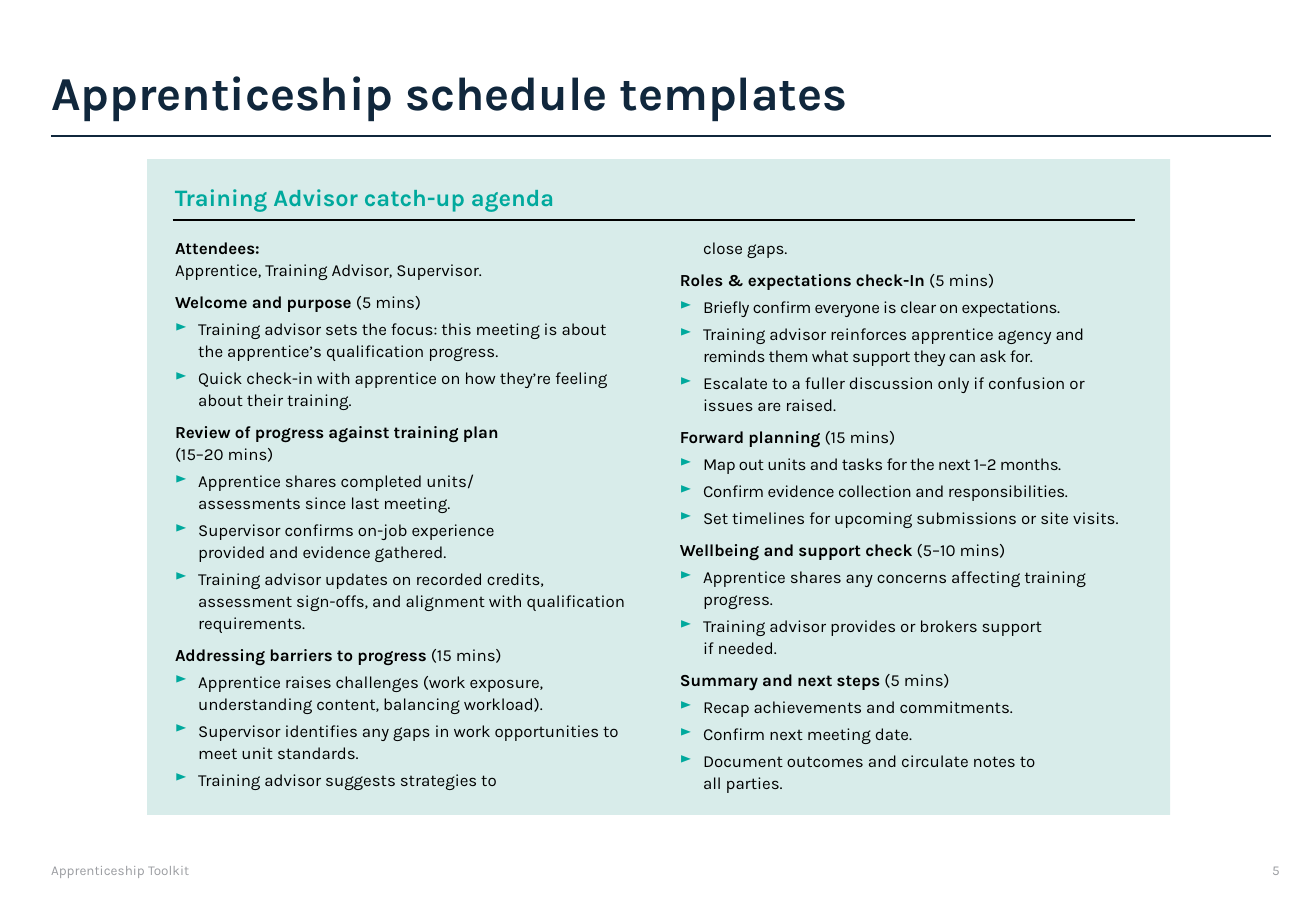
from dataclasses import dataclass

from lxml.etree import SubElement
from pptx import Presentation
from pptx.dml.color import RGBColor
from pptx.enum.shapes import MSO_CONNECTOR, MSO_SHAPE
from pptx.enum.text import MSO_ANCHOR, MSO_AUTO_SIZE, PP_ALIGN
from pptx.oxml.ns import qn
from pptx.util import Pt

EMU_PER_PX = 9144


@dataclass(frozen=True)
class Theme:
    font: str = "Karla"
    navy: str = "10273C"
    teal: str = "00A99D"
    mint: str = "D8ECEA"
    black: str = "000000"
    grey: str = "9B9DA1"
    title: int = 28
    heading: int = 14
    body: int = 10
    footer: int = 8
    leading: int = 13
    gap: int = 3
    section_gap: int = 6


@dataclass(frozen=True)
class Box:
    left: int
    top: int
    width: int
    height: int

    def inside(self, left, top, width, height):
        return Box(self.left + left, self.top + top, width, height)

    def emu(self):
        return [px(side) for side in (self.left, self.top, self.width, self.height)]


THEME = Theme()

AGENDA = [
    ("Welcome and purpose ", "(5 mins)", [
        "Training advisor sets the focus: this meeting is about the apprentice’s qualification progress.",
        "Quick check-in with apprentice on how they’re feeling about their training.",
    ]),
    ("Review of progress against training plan \n", "(15–20 mins)", [
        "Apprentice shares completed units/\nassessments since last meeting.",
        "Supervisor confirms on-job experience \nprovided and evidence gathered.",
        "Training advisor updates on recorded credits, assessment sign-offs, "
        "and alignment with qualification requirements.",
    ]),
    ("Addressing barriers to progress ", "(15 mins)", [
        "Apprentice raises challenges (work exposure, understanding content, balancing workload).",
        "Supervisor identifies any gaps in work opportunities to meet unit standards.",
        "Training advisor suggests strategies to \nclose gaps.",
    ]),
    ("Roles & expectations check-In ", "(5 mins)", [
        [("Briefly confirm everyone is clear on expectations.", -0.2)],
        [("Training advisor reinforces apprentice agency ", 0),
         ("and reminds them what support they can ask for.", -0.2)],
        "Escalate to a fuller discussion only if confusion or issues are raised.",
    ]),
    ("Forward planning ", "(15 mins)", [
        [("Map out units and tasks for the next 1–2 months.", -0.2)],
        [("Confirm evidence collection and responsibilities.", -0.1)],
        "Set timelines for upcoming submissions or site visits.",
    ]),
    ("Wellbeing and support check ", "(5–10 mins)", [
        "Apprentice shares any concerns affecting training progress.",
        "Training advisor provides or brokers support \nif needed.",
    ]),
    ("Summary and next steps ", "(5 mins)", [
        "Recap achievements and commitments.",
        "Confirm next meeting date.",
        "Document outcomes and circulate notes to \nall parties.",
    ]),
]


def px(length):
    return length * EMU_PER_PX


def add_span(para, text, size, color, bold=False, tracking=0):
    for index, line in enumerate(text.split("\n")):
        if index:
            para.add_line_break()
        if not line:
            continue
        span = para.add_run()
        span.text = line
        span.font.name = THEME.font
        span.font.size = Pt(size)
        span.font.bold = bold
        span.font.color.rgb = RGBColor.from_string(color)
        if tracking:
            span.font._element.set("spc", str(round(tracking * 100)))


def prepare_frame(frame):
    frame.word_wrap = True
    frame.auto_size = MSO_AUTO_SIZE.NONE
    frame.vertical_anchor = MSO_ANCHOR.TOP
    frame.margin_left = frame.margin_top = frame.margin_right = frame.margin_bottom = 0
    return frame


def add_frame(page, box):
    return prepare_frame(page.shapes.add_textbox(*box.emu()).text_frame)


def add_label(page, box, text, size, color, bold=False):
    add_span(add_frame(page, box).paragraphs[0], text, size, color, bold)


def add_rule(page, left, top, width, color):
    rule = page.shapes.add_connector(
        MSO_CONNECTOR.STRAIGHT, px(left), px(top), px(left + width), px(top))
    rule.line.color.rgb = RGBColor.from_string(color)
    rule.line.width = Pt(1)
    SubElement(rule._element.spPr, qn("a:effectLst"))


def add_bullet(para):
    properties = para._p.get_or_add_pPr()
    properties.set("marL", str(px(19)))
    properties.set("indent", str(px(-19)))
    color = SubElement(properties, qn("a:buClr"))
    SubElement(color, qn("a:srgbClr")).set("val", THEME.teal)
    SubElement(properties, qn("a:buSzPct")).set("val", "90000")
    SubElement(properties, qn("a:buChar")).set("char", "►")


def space(para, after):
    para.line_spacing = Pt(THEME.leading)
    para.space_after = Pt(after)


def add_heading(para, heading, detail, after):
    space(para, after)
    add_span(para, heading, THEME.body, THEME.black, bold=True)
    add_span(para, detail, THEME.body, THEME.black)


def add_agenda(page, box):
    frame = add_frame(page, box)
    columns = frame._txBody.bodyPr
    columns.set("numCol", "2")
    columns.set("spcCol", str(px(39)))
    add_heading(frame.paragraphs[0], "Attendees: \n",
                "Apprentice, Training Advisor, Supervisor.", THEME.section_gap)
    for heading, minutes, bullets in AGENDA:
        add_heading(frame.add_paragraph(), heading, minutes, THEME.gap)
        for number, bullet in enumerate(bullets, 1):
            para = frame.add_paragraph()
            space(para, THEME.section_gap if number == len(bullets) else THEME.gap)
            add_bullet(para)
            spans = [(bullet, 0)] if isinstance(bullet, str) else bullet
            for text, tracking in spans:
                add_span(para, text, THEME.body, THEME.black, tracking=tracking)


def add_panel(page, box):
    panel = page.shapes.add_shape(MSO_SHAPE.RECTANGLE, *box.emu())
    panel.shadow.inherit = False
    panel.fill.solid()
    panel.fill.fore_color.rgb = RGBColor.from_string(THEME.mint)
    panel.line.fill.background()
    add_agenda(page, box.inside(23, 63, 792, 465))
    add_label(page, box.inside(23, 20, 677, 24), "Training Advisor catch-up agenda",
              THEME.heading, THEME.teal, bold=True)
    add_rule(page, box.left + 21, box.top + 50, 792, THEME.black)


def add_title(page, box):
    title = page.shapes.title
    title.left, title.top, title.width, title.height = box.inside(0, 0, box.width, 47).emu()
    para = prepare_frame(title.text_frame).paragraphs[0]
    para.alignment = PP_ALIGN.LEFT
    add_span(para, "Apprenticeship schedule templates", THEME.title, THEME.navy, bold=True)
    add_rule(page, box.left, box.top + box.height, box.width, THEME.navy)


def add_footer(page, box):
    add_label(page, box.inside(0, 0, 219, 18), "Apprenticeship Toolkit", THEME.footer, THEME.grey)
    add_label(page, box.inside(box.width - 36, 0, 36, 11), "5", THEME.footer, THEME.grey)


def main():
    deck = Presentation()
    deck.slide_width, deck.slide_height = px(1083), px(750)
    page = deck.slides.add_slide(deck.slide_layouts[5])
    add_title(page, Box(42, 52, 1004, 60))
    add_panel(page, Box(121, 131, 842, 540))
    add_footer(page, Box(42, 710, 1041, 18))
    deck.save("out.pptx")


if __name__ == "__main__":
    main()
